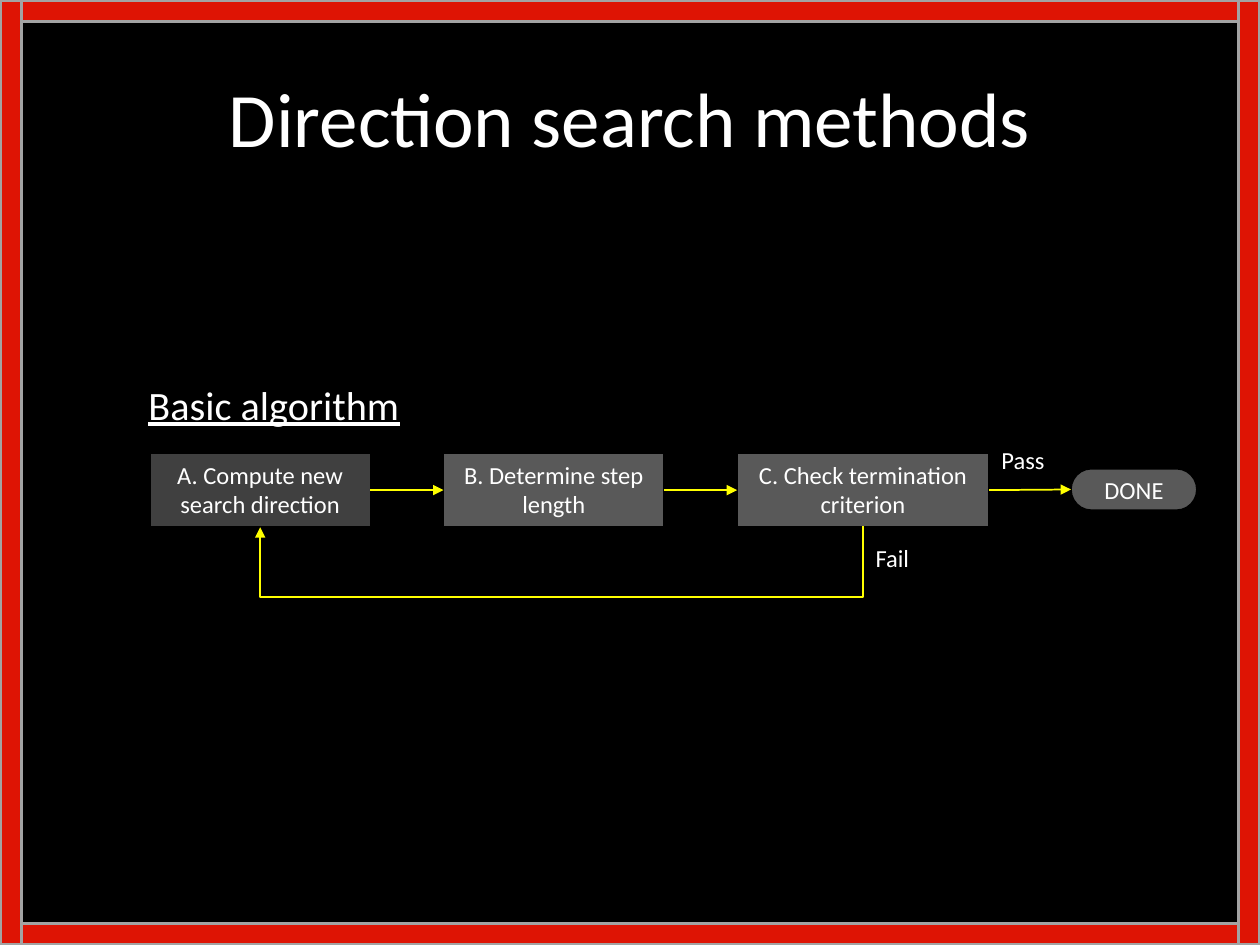
from lxml import etree
from pptx import Presentation
from pptx.dml.color import RGBColor
from pptx.enum.shapes import MSO_CONNECTOR, MSO_SHAPE
from pptx.enum.text import MSO_ANCHOR, PP_ALIGN
from pptx.oxml.ns import qn
from pptx.util import Inches, Pt

RECT, TERMINATOR = MSO_SHAPE.RECTANGLE, MSO_SHAPE.FLOWCHART_TERMINATOR
STRAIGHT, ELBOW = MSO_CONNECTOR.STRAIGHT, MSO_CONNECTOR.ELBOW
TOP, MIDDLE = MSO_ANCHOR.TOP, MSO_ANCHOR.MIDDLE
LEFT, CENTER = PP_ALIGN.LEFT, PP_ALIGN.CENTER
LEFT_SITE, RIGHT_SITE = 1, 3

# Content
TITLE = "Direction search methods"
HEADING = "Basic algorithm"
STEPS = [  # text, width, fill
    ("A. Compute new search direction", 1.75, "dark"),
    ("B. Determine step length", 1.75, "grey"),
    ("C. Check termination criterion", 2, "grey"),
]
DONE = "DONE"
BRANCH_LABELS = [("Fail", 6.85, 4.26, 0.51), ("Pass", 7.85, 3.48, 0.63)]

COLORS = {"back": "000000", "text": "FFFFFF", "dark": "404040", "grey": "595959",
          "arrow": "FFFF00", "frame": "DE1404", "edge": "A3A3A3"}

# Layout in inches
SLIDE_W, SLIDE_H, BAR = 10, 7.5, 0.17
STEP_X, STEP_Y, STEP_H, STEP_GAP = 1.19, 3.6, 0.58, 0.58
LOOP_DROP, LOOP_BASE = 0.57, 0.01


def rgb(name):
    return RGBColor.from_string(COLORS[name])


def write(shape, text, size, align=LEFT, anchor=TOP, wrap=True):
    frame = shape.text_frame
    frame.word_wrap = wrap
    frame.vertical_anchor = anchor
    frame.text = text
    paragraph = frame.paragraphs[0]
    paragraph.alignment = align
    font = paragraph.font
    font.name, font.size, font.color.rgb = "Calibri", Pt(size), rgb("text")
    return paragraph


def add_box(kind, x, y, w, h, fill, line="back", weight=1):
    box = slide.shapes.add_shape(kind, Inches(x), Inches(y), Inches(w), Inches(h))
    box.shadow.inherit = False
    box.fill.solid()
    box.fill.fore_color.rgb = rgb(fill)
    box.line.color.rgb = rgb(line)
    box.line.width = Pt(weight)
    return box


def add_label(text, x, y, w, h, size, wrap):
    label = slide.shapes.add_textbox(Inches(x), Inches(y), Inches(w), Inches(h))
    return write(label, text, size, wrap=wrap)


def add_arrow(kind, x1, y1, x2, y2):
    arrow = slide.shapes.add_connector(kind, Inches(x1), Inches(y1), Inches(x2), Inches(y2))
    arrow.line.color.rgb = rgb("arrow")
    arrow.line.width = Pt(1)
    etree.SubElement(arrow.line._get_or_add_ln(), qn("a:tailEnd"), type="triangle")
    etree.SubElement(arrow._element.spPr, qn("a:effectLst"))
    return arrow


prs = Presentation()
prs.slide_width, prs.slide_height = Inches(SLIDE_W), Inches(SLIDE_H)
slide = prs.slides.add_slide(prs.slide_layouts[5])
slide.background.fill.solid()
slide.background.fill.fore_color.rgb = rgb("back")

# Title
title = slide.shapes.title
title.left, title.top, title.width, title.height = map(Inches, (0.5, 0.3, 9, 1.25))
write(title, TITLE, 44, CENTER, MIDDLE)

# Steps from left to right, then the end mark
nodes, centers, x = [], [], STEP_X
for text, width, fill in STEPS:
    step = add_box(RECT, x, STEP_Y, width, STEP_H, fill)
    write(step, text, 14, CENTER)
    nodes.append(step)
    centers.append(x + width / 2)
    x += width + STEP_GAP
done = add_box(TERMINATOR, 8.5, 3.72, 1, 0.33, "grey")
write(done, DONE, 14, CENTER, MIDDLE, wrap=False)
nodes.append(done)

# Forward arrows
for source, target in zip(nodes, nodes[1:]):
    arrow = add_arrow(STRAIGHT, 0, 0, 1, 1)
    arrow.begin_connect(source, RIGHT_SITE)
    arrow.end_connect(target, LEFT_SITE)

# Loop back from C to A: an elbow turned by 90 degrees about its centre
span, middle = centers[2] - centers[0], (centers[0] + centers[2]) / 2
bottom = STEP_Y + STEP_H
loop = add_arrow(ELBOW, middle - LOOP_BASE / 2, bottom - span / 2,
                 middle + LOOP_BASE / 2, bottom + span / 2)
loop_properties = loop._element.spPr
loop_properties.find(qn("a:xfrm")).set("rot", str(90 * 60000))
adjustments = loop_properties.find(qn("a:prstGeom")).get_or_add_avLst()
etree.SubElement(adjustments, qn("a:gd"), name="adj1",
                 fmla=f"val {round(LOOP_DROP / LOOP_BASE * 100000)}")

# Branch labels and heading
for text, left, top, width in BRANCH_LABELS:
    add_label(text, left, top, width, 0.33, 14, wrap=False)
heading = add_label(HEADING, 1.08, 3.01, 6.85, 0.5, 23, wrap=True)
heading.line_spacing = 0.9
heading.font.underline = True

# Frame: side bars, then top and bottom bars
for left in (0, SLIDE_W - BAR):
    add_box(RECT, left, 0, BAR, SLIDE_H, "frame", "edge", 2)
for top in (0, SLIDE_H - BAR):
    add_box(RECT, BAR, top, SLIDE_W - 2 * BAR, BAR, "frame", "edge", 2)

prs.save("out.pptx")
